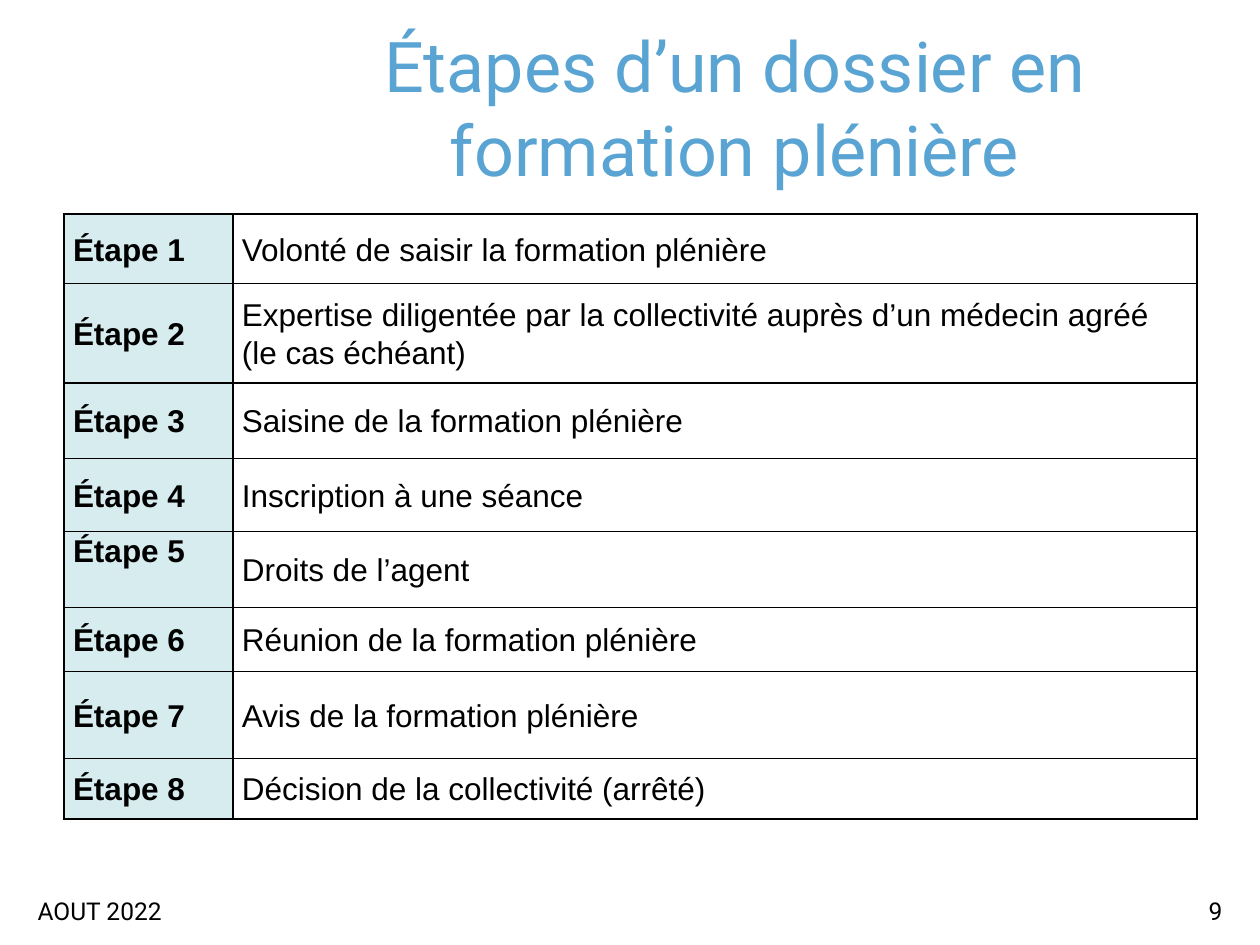
from lxml import etree
from pptx import Presentation
from pptx import util as u
from pptx.dml.color import RGBColor
from pptx.enum import text as t
from pptx.oxml.ns import qn

STEPS = [  # wording, row height
    ("Volonté de saisir la formation plénière", 0.55),
    ("Expertise diligentée par la collectivité auprès d’un médecin agréé "
     "(le cas échéant)", 0.79),
    ("Saisine de la formation plénière", 0.6),
    ("Inscription à une séance", 0.58),
    ("Droits de l’agent", 0.6),
    ("Réunion de la formation plénière", 0.51),
    ("Avis de la formation plénière", 0.69),
    ("Décision de la collectivité (arrêté)", 0.48),
]
WIDTHS = (1.34, 7.65)
LEFT, CENTER, RIGHT = t.PP_ALIGN.LEFT, t.PP_ALIGN.CENTER, t.PP_ALIGN.RIGHT
TOP, MIDDLE = t.MSO_ANCHOR.TOP, t.MSO_ANCHOR.MIDDLE


def color(code):
    return RGBColor.from_string(code)


def write(frame, words, size, face, code="000000", bold=False, align=LEFT):
    frame.word_wrap = True
    para = frame.paragraphs[0]
    para.alignment = align
    run = para.add_run()
    run.text = words
    font = run.font
    font.size, font.name, font.bold = u.Pt(size), face, bold
    font.color.rgb = color(code)
    return para


def place(shape, *box):
    shape.left, shape.top, shape.width, shape.height = map(u.Inches, box)


def add_title(slide, words):
    title = slide.shapes.title
    place(title, 2.16, 0.22, 7.34, 1.25)
    title.text_frame.vertical_anchor = MIDDLE
    title.text_frame.auto_size = t.MSO_AUTO_SIZE.NONE
    write(title.text_frame, words, 40, "Roboto", "59A4D3", align=CENTER)


def add_note(slide, left, words, align):
    box = slide.shapes.add_textbox(
        u.Inches(left), u.Inches(7.06), u.Inches(2.33), u.Inches(0.31))
    write(box.text_frame, words, 14, "Roboto", align=align)


def add_edges(cell):
    props = cell._tc.get_or_add_tcPr()
    for side in ("lnL", "lnR", "lnT", "lnB"):
        line = etree.SubElement(props, qn("a:" + side), w=str(u.Pt(1)))
        fill = etree.SubElement(line, qn("a:solidFill"))
        etree.SubElement(fill, qn("a:srgbClr"), val="000000")


def fill_cell(cell, words, back, bold, anchor):
    add_edges(cell)
    cell.fill.solid()
    cell.fill.fore_color.rgb = color(back)
    cell.margin_left = cell.margin_right = u.Inches(0.07)
    cell.margin_top = cell.margin_bottom = 0
    cell.vertical_anchor = anchor
    para = write(cell.text_frame, words, 18, "Arial", bold=bold)
    para.line_spacing = 1.07


def add_steps(slide):
    high = sum(row for _, row in STEPS)
    table = slide.shapes.add_table(
        len(STEPS), 2, u.Inches(0.51), u.Inches(1.7),
        u.Inches(sum(WIDTHS)), u.Inches(high)).table
    table.first_row = table.horz_banding = False
    for col, wide in zip(table.columns, WIDTHS):
        col.width = u.Inches(wide)
    for i, (words, row) in enumerate(STEPS):
        table.rows[i].height = u.Inches(row)
        # The label of step 5 sits at the top of its cell
        anchor = TOP if i == 4 else MIDDLE
        fill_cell(table.cell(i, 0), f"Étape {i + 1}", "D6ECEE", True, anchor)
        fill_cell(table.cell(i, 1), words, "FFFFFF", False, MIDDLE)


def main():
    deck = Presentation()
    deck.slide_width, deck.slide_height = u.Inches(10), u.Inches(7.5)
    slide = deck.slides.add_slide(deck.slide_layouts[5])
    add_title(slide, "Étapes d’un dossier en formation plénière")
    # Footer: date and page number
    add_note(slide, 0.2, "AOUT 2022", LEFT)
    add_note(slide, 7.47, "9", RIGHT)
    add_steps(slide)
    deck.save("out.pptx")


if __name__ == "__main__":
    main()
